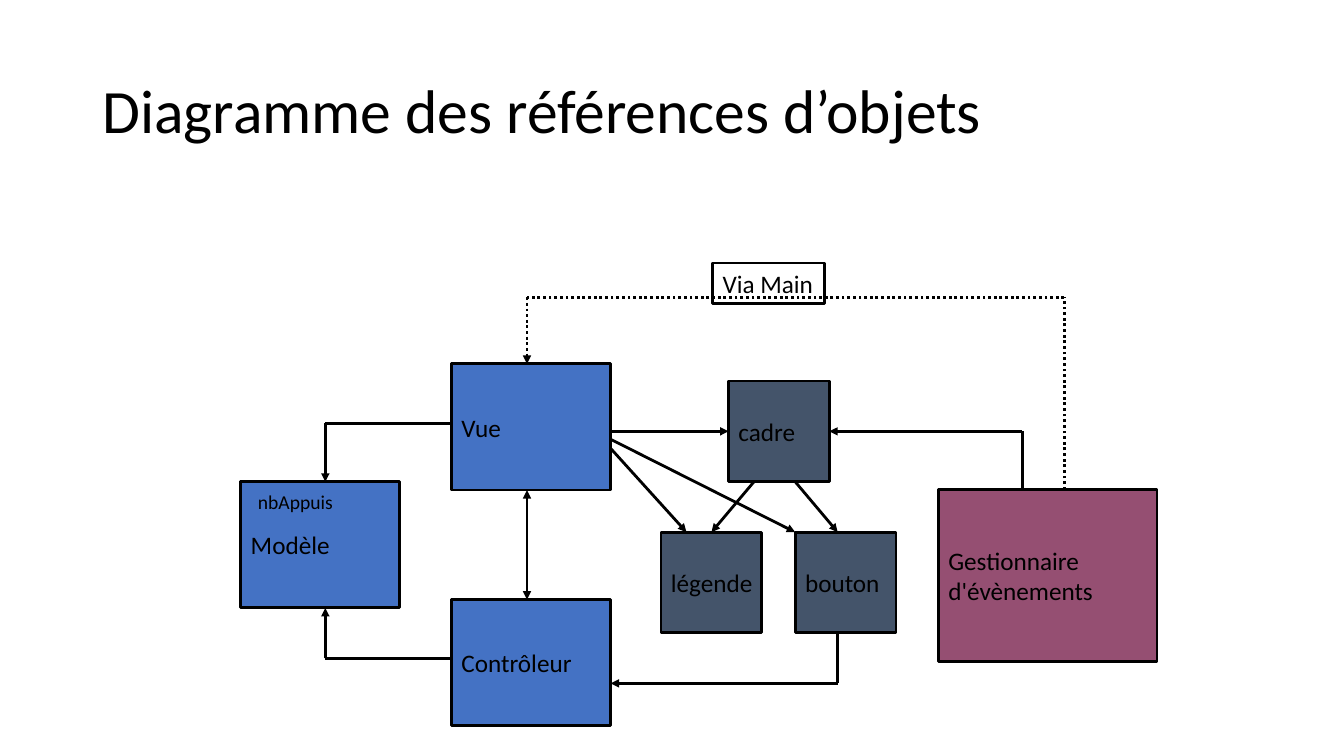
from itertools import pairwise
from lxml.etree import SubElement
from pptx import Presentation
from pptx.dml.color import RGBColor
from pptx.enum.dml import MSO_LINE
from pptx.enum.shapes import MSO_CONNECTOR as Link, MSO_SHAPE as Shape
from pptx.enum.text import MSO_ANCHOR as Anchor, MSO_AUTO_SIZE as Fit, PP_ALIGN as Align
from pptx.oxml.ns import qn
from pptx.util import Cm, Pt

# Content, lengths in cm
FONT, BLACK = "Calibri", "000000"
BLUE, SLATE, PLUM = "4472C4", "44546A", "954F72"
TITLE = "Diagramme des références d’objets"
FIELD = "nbAppuis"
NOTE = "Via Main"
MVC, PART, EVENT = (4.01, 3.18), (2.54, 2.54), (5.51, 4.34)

# Text, left, top, size, fill
BOXES = [
    ("Vue", 11.38, 9.17, MVC, BLUE),
    ("Contrôleur", 11.38, 15.11, MVC, BLUE),
    ("Gestionnaire\vd'évènements", 23.65, 12.34, EVENT, PLUM),
    ("Modèle", 6.07, 12.14, MVC, BLUE),
    ("cadre", 18.36, 9.6, PART, SLATE),
    ("légende", 16.66, 13.41, PART, SLATE),
    ("bouton", 20.04, 13.41, PART, SLATE),
]

# Corner points of each route; the arrow sits at the last one
ROUTES = [
    [(19, 12.14), (17.93, 13.41)],
    [(20.04, 12.14), (21.11, 13.41)],
    [(25.76, 12.34), (25.76, 10.87), (20.9, 10.87)],
    [(15.39, 10.87), (18.36, 10.87)],
    [(15.39, 11.07), (20.04, 13.41)],
    [(15.39, 11.3), (17.3, 13.41)],
    [(21.11, 15.95), (21.11, 17.22), (15.39, 17.22)],
    [(11.38, 16.59), (8.2, 16.59), (8.2, 15.32)],
    [(11.38, 10.67), (8.2, 10.67), (8.2, 12.14)],
]
DOTTED = [(26.82, 12.34), (26.82, 7.49), (13.28, 7.49), (13.28, 9.17)]
TWO_WAY = [(13.28, 15.11), (13.28, 12.35)]

deck = Presentation()
deck.slide_width, deck.slide_height = Cm(33.87), Cm(19.05)
slide = deck.slides.add_slide(deck.slide_layouts[6])


def color(code):
    return RGBColor.from_string(code)


def outline(line):
    line.color.rgb = color(BLACK)
    line.width = Pt(2)


def write(shape, text, size=18, anchor=Anchor.MIDDLE, wrap=False, fit=Fit.NONE):
    frame = shape.text_frame
    frame.text = text
    frame.word_wrap = wrap
    frame.auto_size = fit
    frame.vertical_anchor = anchor
    para = frame.paragraphs[0]
    para.alignment = Align.LEFT
    for run in para.runs:
        run.font.name = FONT
        run.font.size = Pt(size)
        run.font.color.rgb = color(BLACK)
    return para


def label(text, left, top, wide, high, **style):
    shape = slide.shapes.add_textbox(Cm(left), Cm(top), Cm(wide), Cm(high))
    return shape, write(shape, text, **style)


def box(text, left, top, size, fill):
    wide, high = size
    shape = slide.shapes.add_shape(Shape.RECTANGLE, Cm(left), Cm(top), Cm(wide), Cm(high))
    shape.shadow.inherit = False
    shape.fill.solid()
    shape.fill.fore_color.rgb = color(fill)
    outline(shape.line)
    write(shape, text)


def route(points, dotted=False, both=False):
    for start, end in pairwise(points):
        link = slide.shapes.add_connector(Link.STRAIGHT, *map(Cm, start + end))
        outline(link.line)
        if dotted:
            link.line.dash_style = MSO_LINE.ROUND_DOT
        props = link.line._get_or_add_ln()
        if both:
            SubElement(props, qn("a:headEnd"), type="triangle")
        if end == points[-1]:
            SubElement(props, qn("a:tailEnd"), type="triangle")
        SubElement(link._element.spPr, qn("a:effectLst"))


# Title
_, head = label(TITLE, 2.33, 1.01, 29.21, 3.68, size=44, wrap=True)
head.line_spacing = 0.9

# Objects
for item in BOXES:
    box(*item)
label(FIELD, 6.25, 12.22, 2.79, 0.84, size=14, anchor=Anchor.TOP, fit=Fit.SHAPE_TO_FIT_TEXT)

# References
for points in ROUTES:
    route(points)
route(DOTTED, dotted=True)
route(TWO_WAY, both=True)

# Note on the dotted route
note, _ = label(NOTE, 17.96, 6.63, 2.82, 1.02, anchor=Anchor.TOP, fit=Fit.SHAPE_TO_FIT_TEXT)
outline(note.line)

deck.save("out.pptx")
